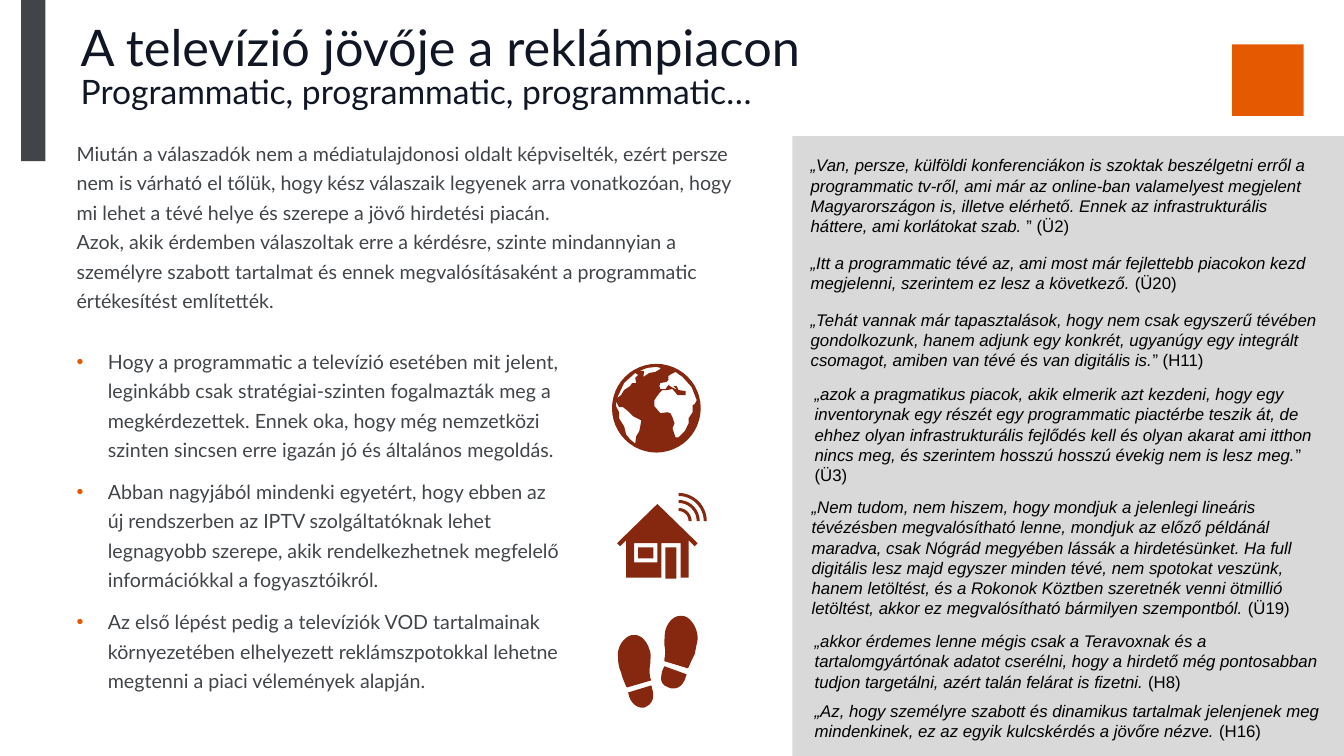
from math import cos, sin, pi
from lxml import etree
from pptx import Presentation
from pptx.dml.color import RGBColor
from pptx.enum.shapes import MSO_SHAPE
from pptx.enum.text import MSO_ANCHOR, MSO_AUTO_SIZE, PP_ALIGN
from pptx.oxml.ns import qn
from pptx.util import Inches, Pt

RECT = MSO_SHAPE.RECTANGLE
TOP, LEFT, FIXED = MSO_ANCHOR.TOP, PP_ALIGN.LEFT, MSO_AUTO_SIZE.NONE
SLATE = RGBColor(0x41, 0x45, 0x49)
NAVY = RGBColor(0x10, 0x16, 0x23)
BLACK = RGBColor(0, 0, 0)
GREY = RGBColor(0xD9, 0xD9, 0xD9)
ORANGE = RGBColor(0xE5, 0x5A, 0x00)
RUST = RGBColor(0x85, 0x28, 0x0F)

TITLE = [("A televízió jövője a reklámpiacon", 36),
         ("Programmatic, programmatic, programmatic…", 24)]
INTRO = [
    "Miután a válaszadók nem a médiatulajdonosi oldalt képviselték, ezért persze nem is várható el tőlük, hogy kész válaszaik legyenek arra vonatkozóan, hogy mi lehet a tévé helye és szerepe a jövő hirdetési piacán.",
    "Azok, akik érdemben válaszoltak erre a kérdésre, szinte mindannyian a személyre szabott tartalmat és ennek megvalósításaként a programmatic értékesítést említették.",
]
POINTS = [
    "Hogy a programmatic a televízió esetében mit jelent, leginkább csak stratégiai-szinten fogalmazták meg a megkérdezettek. Ennek oka, hogy még nemzetközi szinten sincsen erre igazán jó és általános megoldás.",
    "Abban nagyjából mindenki egyetért, hogy ebben az új rendszerben az IPTV szolgáltatóknak lehet legnagyobb szerepe, akik rendelkezhetnek megfelelő információkkal a fogyasztóikról.",
    "Az első lépést pedig a televíziók VOD tartalmainak környezetében elhelyezett reklámszpotokkal lehetne megtenni a piaci vélemények alapján.",
]
QUOTES = [
    (8.04, 1.46, 1.09, "„Van, persze, külföldi konferenciákon is szoktak beszélgetni erről a programmatic tv-ről, ami már az online-ban valamelyest megjelent Magyarországon is, illetve elérhető. Ennek az infrastrukturális háttere, ami korlátokat szab. ", "” (Ü2)"),
    (8.04, 2.43, 0.63, "„Itt a programmatic tévé az, ami most már fejlettebb piacokon kezd megjelenni, szerintem ez lesz a következő. ", "(Ü20)"),
    (8.04, 2.99, 1.09, "„Tehát vannak már tapasztalások, hogy nem csak egyszerű tévében gondolkozunk, hanem adjunk egy konkrét, ugyanúgy egy integrált csomagot, amiben van tévé és van digitális is.", "” (H11)"),
    (8.08, 3.73, 1.09, "„azok a pragmatikus piacok, akik elmerik azt kezdeni, hogy egy inventorynak egy részét egy programmatic piactérbe teszik át, de ehhez olyan infrastrukturális fejlődés kell és olyan akarat ami itthon nincs meg, és szerintem hosszú hosszú évekig nem is lesz meg.", "” (Ü3)"),
    (8.05, 4.85, 0.63, "„Nem tudom, nem hiszem, hogy mondjuk a jelenlegi lineáris tévézésben megvalósítható lenne, mondjuk az előző példánál maradva, csak Nógrád megyében lássák a hirdetésünket. Ha full digitális lesz majd egyszer minden tévé, nem spotokat veszünk, hanem letöltést, és a Rokonok Köztben szeretnék venni ötmillió letöltést, akkor ez megvalósítható bármilyen szempontból. ", "(Ü19)"),
    (8.08, 6.18, 0.63, "„akkor érdemes lenne mégis csak a Teravoxnak és a tartalomgyártónak adatot cserélni, hogy a hirdető még pontosabban tudjon targetálni, azért talán felárat is fizetni. ", "(H8)"),
    (8.08, 6.87, 0.63, "„Az, hogy személyre szabott és dinamikus tartalmak jelenjenek meg mindenkinek, ez az egyik kulcskérdés a jövőre nézve. ", "(H16)"),
]

LANDS = [
    [(6.54, 3.9), (6.51, 3.94), (6.49, 3.97), (6.49, 4.03), (6.55, 4.1), (6.62, 4.09), (6.65, 4.1),
     (6.67, 4.14), (6.69, 4.2), (6.67, 4.25), (6.7, 4.34), (6.73, 4.34), (6.79, 4.28), (6.83, 4.2),
     (6.83, 4.15), (6.87, 4.09), (6.87, 4.02), (6.89, 4.01), (6.91, 3.97), (6.86, 3.84), (6.77, 3.74),
     (6.7, 3.69), (6.66, 3.71), (6.63, 3.73), (6.63, 3.77), (6.61, 3.79), (6.55, 3.8), (6.54, 3.83),
     (6.55, 3.86), (6.6, 3.86), (6.63, 3.82), (6.66, 3.84), (6.7, 3.86), (6.71, 3.86), (6.68, 3.83),
     (6.71, 3.83), (6.73, 3.87), (6.8, 3.88), (6.8, 3.92), (6.75, 3.92), (6.72, 3.92), (6.67, 3.86),
     (6.62, 3.87), (6.57, 3.87)],
    [(6.55, 3.65), (6.51, 3.64), (6.42, 3.65), (6.34, 3.68), (6.39, 3.68), (6.38, 3.74), (6.44, 3.7),
     (6.5, 3.69), (6.55, 3.66)],
    [(6.3, 3.7), (6.19, 3.8), (6.12, 3.95), (6.16, 3.92), (6.19, 3.87), (6.25, 3.83), (6.27, 3.8),
     (6.31, 3.8), (6.3, 3.75), (6.33, 3.72)],
    [(6.11, 3.98), (6.11, 4.03), (6.14, 4.09), (6.14, 4.15), (6.19, 4.23), (6.21, 4.31), (6.25, 4.36),
     (6.3, 4.4), (6.31, 4.33), (6.34, 4.28), (6.35, 4.23), (6.36, 4.17), (6.28, 4.13), (6.23, 4.08),
     (6.18, 4.04), (6.14, 4.04)],
]
HOUSE = [
    [(6.12, 5.39), (6.15, 5.42), (6.21, 5.36), (6.21, 5.73), (6.56, 5.73), (6.56, 5.39), (6.75, 5.39),
     (6.75, 5.73), (6.83, 5.73), (6.83, 5.36), (6.89, 5.42), (6.92, 5.39), (6.52, 5)],
    [(6.52, 5.58), (6.29, 5.58), (6.29, 5.39), (6.52, 5.39)],
]
PANES = [(6.6, 5.43, 0.11, 0.31), (6.33, 5.43, 0.15, 0.11)]
WAVES = [0.13, 0.21, 0.28]
FEET = [
    [(6.16, 6.67), (6.14, 6.63, 6.13, 6.58, 6.13, 6.53), (6.12, 6.47, 6.14, 6.41, 6.17, 6.37),
     (6.2, 6.33, 6.24, 6.3, 6.28, 6.3), (6.36, 6.29, 6.42, 6.37, 6.44, 6.44),
     (6.46, 6.48, 6.45, 6.53, 6.45, 6.58), (6.44, 6.64, 6.44, 6.67, 6.45, 6.73), (6.46, 6.75),
     (6.22, 6.82), (6.21, 6.81), (6.19, 6.76, 6.17, 6.72, 6.16, 6.67)],
    [(6.46, 6.8), (6.47, 6.84), (6.49, 6.9, 6.48, 6.98, 6.41, 7.01), (6.39, 7.02),
     (6.31, 7.03, 6.26, 6.97, 6.24, 6.91), (6.23, 6.87)],
    [(6.92, 6.34), (6.91, 6.39, 6.9, 6.44, 6.89, 6.49), (6.87, 6.53, 6.85, 6.57, 6.83, 6.62),
     (6.82, 6.63), (6.59, 6.56), (6.59, 6.54), (6.6, 6.48, 6.6, 6.46, 6.59, 6.4),
     (6.59, 6.35, 6.59, 6.3, 6.6, 6.25), (6.62, 6.18, 6.68, 6.1, 6.76, 6.11),
     (6.81, 6.11, 6.84, 6.14, 6.87, 6.18), (6.9, 6.22, 6.92, 6.28, 6.92, 6.34)],
    [(6.81, 6.69), (6.8, 6.72), (6.78, 6.79, 6.73, 6.84, 6.66, 6.83), (6.63, 6.82),
     (6.54, 6.79, 6.55, 6.73, 6.57, 6.65), (6.59, 6.61)],
]

prs = Presentation()
prs.slide_width, prs.slide_height = Inches(13.33), Inches(7.5)
slide = prs.slides.add_slide(prs.slide_layouts[1])
shapes = slide.shapes


def paint(shape, color):
    shape.shadow.inherit = False
    shape.fill.solid()
    shape.fill.fore_color.rgb = color
    shape.line.fill.background()


def block(x, y, w, h, color):
    paint(shapes.add_shape(RECT, Inches(x), Inches(y), Inches(w), Inches(h)), color)


def arc(x, y, r, start, end, steps):
    turns = [start + (end - start) * i / steps for i in range(steps + 1)]
    return [(x + r * cos(t), y + r * sin(t)) for t in turns]


def trace(knots):
    dots = []
    for knot in knots:
        if len(knot) == 2:
            dots.append(knot)
            continue
        a, b, c, d = dots[-1], knot[:2], knot[2:4], knot[4:]
        for t in [i / 6 for i in range(1, 7)]:
            u = 1 - t
            dots.append(tuple(u**3 * a[k] + 3 * u * u * t * b[k] + 3 * u * t * t * c[k] + t**3 * d[k]
                              for k in (0, 1)))
    return [(Inches(x), Inches(y)) for x, y in dots]


def draw(loops, color):
    first, *rest = [trace(loop) for loop in loops]
    pen = shapes.build_freeform(*first[0], scale=1.0)
    pen.add_line_segments(first[1:], close=True)
    for loop in rest:
        pen.move_to(*loop[0])
        pen.add_line_segments(loop[1:], close=True)
    paint(pen.convert_to_shape(), color)


def frame(shape, x, y, w, h, top=0):
    shape.left, shape.top, shape.width, shape.height = map(Inches, (x, y, w, h))
    text = shape.text_frame
    text.word_wrap, text.auto_size, text.vertical_anchor = True, FIXED, TOP
    text.margin_left = text.margin_right = text.margin_bottom = 0
    text.margin_top = Inches(top)
    return text


def style(para, name, size, color, lead):
    para.alignment, para.line_spacing = LEFT, lead
    font = para.font
    font.name, font.size, font.color.rgb = name, Pt(size), color


def fill(text, lines, gap=0, mark=False):
    for i, line in enumerate(lines):
        para = text.paragraphs[0] if i == 0 else text.add_paragraph()
        para.text = line
        para.space_before = Pt(gap if i else 0)
        if mark:
            props = para._p.get_or_add_pPr()
            props.set("marL", str(Inches(0.31)))
            props.set("indent", str(-Inches(0.31)))
            tint = etree.SubElement(props, qn("a:buClr"))
            etree.SubElement(tint, qn("a:srgbClr")).set("val", str(ORANGE))
            etree.SubElement(props, qn("a:buChar")).set("char", "•")
        style(para, "Lato", 14, SLATE, 1.25)


block(12.22, 0.44, 0.71, 0.71, ORANGE)
block(0.21, 0, 0.24, 1.6, SLATE)
block(7.86, 1.35, 5.47, 6.15, GREY)

head = frame(shapes.title, 0.8, 0.25, 8.45, 0.54).paragraphs[0]
for i, (line, size) in enumerate(TITLE):
    if i:
        head.add_line_break()
    run = head.add_run()
    run.text, run.font.size = line, Pt(size)
style(head, "Lato", 36, NAVY, 0.85)

fill(frame(shapes.add_textbox(0, 0, 0, 0), 0.76, 1.35, 6.66, 1.85), INTRO)
fill(frame(slide.placeholders[1], 0.76, 3.41, 4.83, 3.85), POINTS, 9, True)

for x, y, h, quote, source in QUOTES:
    para = frame(shapes.add_textbox(0, 0, 0, 0), x, y, 5.12, h, 0.08).paragraphs[0]
    for part, slant in ((quote, True), (source, False)):
        run = para.add_run()
        run.text, run.font.italic = part, slant
    style(para, "Arial", 12, BLACK, 1.0)

draw([arc(6.51, 4.05, 0.44, 0, 2 * pi, 48)] + LANDS, RUST)
draw(HOUSE, RUST)
for pane in PANES:
    block(*pane, RUST)
for r in WAVES:
    draw([arc(6.73, 5.17, r, -pi / 2, 0, 12) + arc(6.73, 5.17, r - 0.03, 0, -pi / 2, 12)], RUST)
draw(FEET, RUST)
prs.save("out.pptx")
